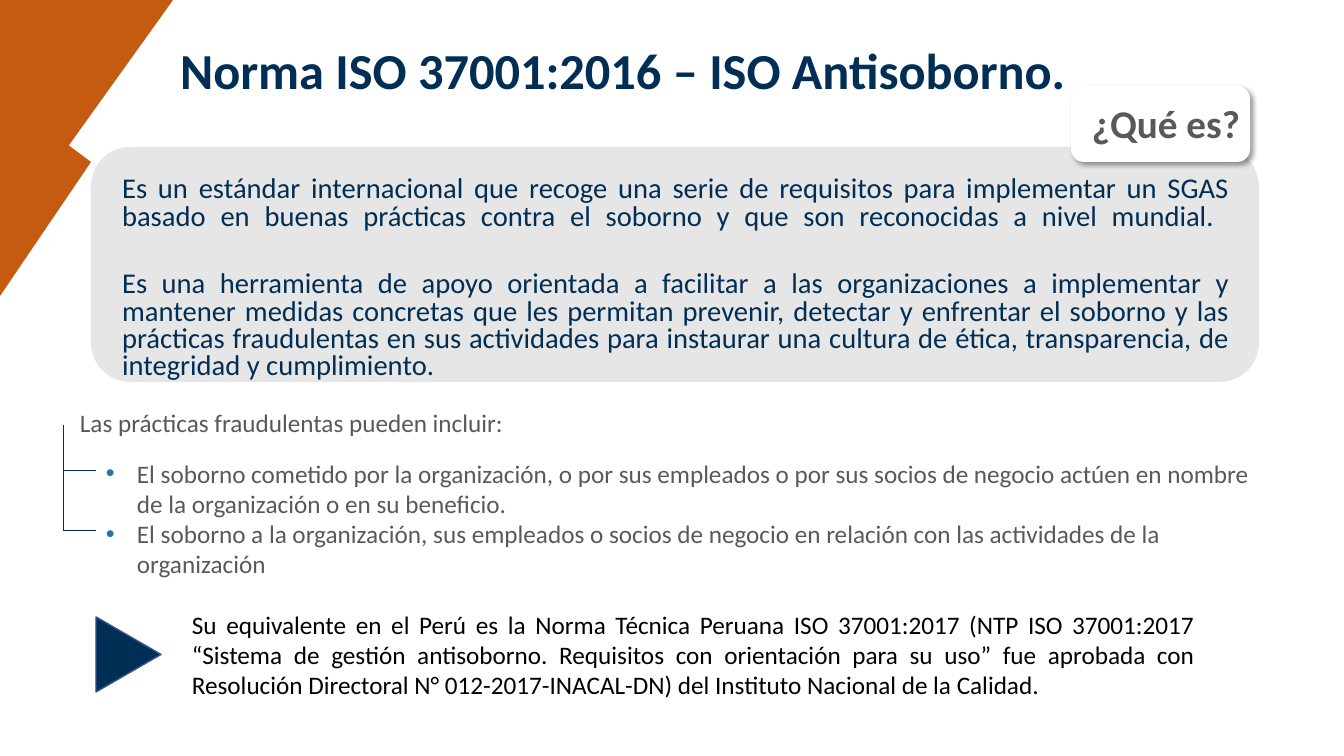
"""Builds the slide that explains the ISO 37001 anti-bribery standard."""
from lxml import etree
from pptx import Presentation
from pptx.dml.color import RGBColor
from pptx.enum.shapes import MSO_CONNECTOR, MSO_SHAPE
from pptx.enum.text import MSO_ANCHOR, MSO_AUTO_SIZE, PP_ALIGN
from pptx.oxml import parse_xml
from pptx.oxml.ns import nsdecls, qn
from pptx.util import Emu, Pt

LEFT, JUSTIFY = PP_ALIGN.LEFT, PP_ALIGN.JUSTIFY
ROUNDED, TRIANGLE = MSO_SHAPE.ROUNDED_RECTANGLE, MSO_SHAPE.ISOSCELES_TRIANGLE
ELBOW = MSO_CONNECTOR.ELBOW
PX = 914400 / 100.8
FONT = "Calibri"
COLORS = {"navy": "002E54", "orange": "C55A11", "panel": "E7E6E6", "white": "FFFFFF",
          "gray": "595959", "black": "000000", "bullet": "2772AF", "edge": "325491"}

TITLE = ["Norma ISO 37001:2016 – ISO Antisoborno."]
QUESTION = ["¿Qué es?"]
DEFINITION = [
    "Es un estándar internacional que recoge una serie de requisitos para implementar un SGAS "
    "basado en buenas prácticas contra el soborno y que son reconocidas a nivel mundial. \v",
    "Es una herramienta de apoyo orientada a facilitar a las organizaciones a implementar y "
    "mantener medidas concretas que les permitan prevenir, detectar y enfrentar el soborno y las "
    "prácticas fraudulentas en sus actividades para instaurar una cultura de ética, "
    "transparencia, de integridad y cumplimiento.",
]
INTRO = ["Las prácticas fraudulentas pueden incluir: "]
PRACTICES = [
    "El soborno cometido por la organización, o por sus empleados o por sus socios de negocio "
    "actúen en nombre de la organización o en su beneficio.",
    "El soborno a la organización, sus empleados o socios de negocio en relación con las "
    "actividades de la organización",
]
EQUIVALENT = [
    "Su equivalente en el Perú es la Norma Técnica Peruana ISO 37001:2017 (NTP ISO 37001:2017 "
    "“Sistema de gestión antisoborno. Requisitos con orientación para su uso” fue aprobada con "
    "Resolución Directoral N° 012-2017-INACAL-DN) del Instituto Nacional de la Calidad.",
]
RIBBONS = [[(0, 94), (91, 162), (0, 296)],
           [(49, 173), (-1, 137), (-1, -1), (173, 0)]]
SHAPES = [
    (ROUNDED, (91, 147, 1168, 235), "panel", None, 0, False),
    (ROUNDED, (1071, 86, 179, 76), "white", None, 0, True),
    (TRIANGLE, (91, 622, 75, 65), "navy", "edge", 90, False),
]
TEXT_BOXES = [
    (QUESTION, (1082, 94, 176, 57), {"size": 28, "color": "gray", "bold": True}),
    (INTRO, (70, 402, 455, 40), {"color": "gray", "align": JUSTIFY, "wrap": False}),
    (PRACTICES, (96, 453, 1179, 132),
     {"color": "gray", "margin": 31, "indent": -31, "bullet": "•"}),
    (EQUIVALENT, (165, 604, 1040, 132), {"color": "black", "align": JUSTIFY, "margin": 17}),
]
BRACKET_LEFT, BRACKET_TOP, BRACKET_RIGHT = 63, 425, 96
BRANCHES = [530, 470]


def px(value):
    return Emu(round(value * PX))


def rgb(name):
    return RGBColor.from_string(COLORS[name])


def place(shape, box):
    for side, value in zip(("left", "top", "width", "height"), box):
        setattr(shape, side, px(value))


def paint(shape, fill, line=None):
    shape.shadow.inherit = False
    shape.fill.solid()
    shape.fill.fore_color.rgb = rgb(fill)
    if line:
        shape.line.color.rgb = rgb(line)
        shape.line.width = Pt(1)
    else:
        shape.line.fill.background()


def write(shape, texts, size=18, color="navy", bold=False, align=LEFT, wrap=True, spacing=1.0,
          gap=0, margin=0, indent=0, bullet=None, anchor=MSO_ANCHOR.TOP):
    frame = shape.text_frame
    frame.auto_size = MSO_AUTO_SIZE.NONE
    frame.word_wrap = wrap
    frame.vertical_anchor = anchor
    for index, text in enumerate(texts):
        paragraph = frame.paragraphs[0] if index == 0 else frame.add_paragraph()
        paragraph.text = text
        layout = {"alignment": align, "line_spacing": spacing,
                  "space_before": Pt(gap if index else 0)}
        for name, value in layout.items():
            setattr(paragraph, name, value)
        font_format = {"name": FONT, "size": Pt(size), "bold": bold}
        for font in [paragraph.font] + [run.font for run in paragraph.runs]:
            for name, value in font_format.items():
                setattr(font, name, value)
            font.color.rgb = rgb(color)
        properties = paragraph._p.get_or_add_pPr()
        properties.set("marL", str(px(margin)))
        properties.set("indent", str(px(indent)))
        marks = ['<a:buNone %s/>']
        if bullet:
            marks = [f'<a:buClr %s><a:srgbClr val="{COLORS["bullet"]}"/></a:buClr>',
                     '<a:buFont %s typeface="Arial"/>', f'<a:buChar %s char="{bullet}"/>']
        defaults = properties.find(qn("a:defRPr"))
        for mark in marks:
            defaults.addprevious(parse_xml(mark % nsdecls("a")))


def cast_shadow(shape):
    effects = shape.element.spPr.find(qn("a:effectLst"))
    effects.append(parse_xml(
        f'<a:outerShdw {nsdecls("a")} blurRad="{Pt(4)}" dist="{Pt(3)}" dir="2700000" '
        f'algn="tl" rotWithShape="0"><a:srgbClr val="{COLORS["black"]}">'
        '<a:alpha val="40000"/></a:srgbClr></a:outerShdw>'))


def add_branch(slide, bottom):
    connector = slide.shapes.add_connector(
        ELBOW, px(BRACKET_LEFT), px(BRACKET_TOP), px(BRACKET_RIGHT), px(bottom))
    connector.line.color.rgb = rgb("navy")
    connector.line.width = Pt(0.5)
    properties = connector.element.spPr
    properties.find(qn("a:xfrm")).set("rot", str(180 * 60000))
    properties.find(qn("a:prstGeom")).set("prst", "bentConnector2")
    etree.SubElement(properties, qn("a:effectLst"))


def main():
    presentation = Presentation()
    presentation.slide_width, presentation.slide_height = px(1344), px(756)
    slide = presentation.slides.add_slide(presentation.slide_layouts[1])
    title, body = slide.placeholders

    for start, *others in RIBBONS:
        builder = slide.shapes.build_freeform(*start, scale=PX)
        builder.add_line_segments(others, close=True)
        paint(builder.convert_to_shape(), "orange")

    for kind, box, fill, line, rotation, shadow in SHAPES:
        shape = slide.shapes.add_shape(kind, *map(px, box))
        paint(shape, fill, line)
        shape.rotation = rotation
        if shadow:
            cast_shadow(shape)

    place(title, (170, 0, 1173, 146))
    write(title, TITLE, size=36, bold=True, spacing=0.9, anchor=MSO_ANCHOR.MIDDLE)
    place(body, (112, 172, 1127, 207))
    write(body, DEFINITION, size=20.4, align=JUSTIFY, spacing=0.8, gap=4)
    body.element.getparent().append(body.element)

    for texts, box, style in TEXT_BOXES:
        write(slide.shapes.add_textbox(*map(px, box)), texts, **style)
    for bottom in BRANCHES:
        add_branch(slide, bottom)
    presentation.save("out.pptx")


if __name__ == "__main__":
    main()
